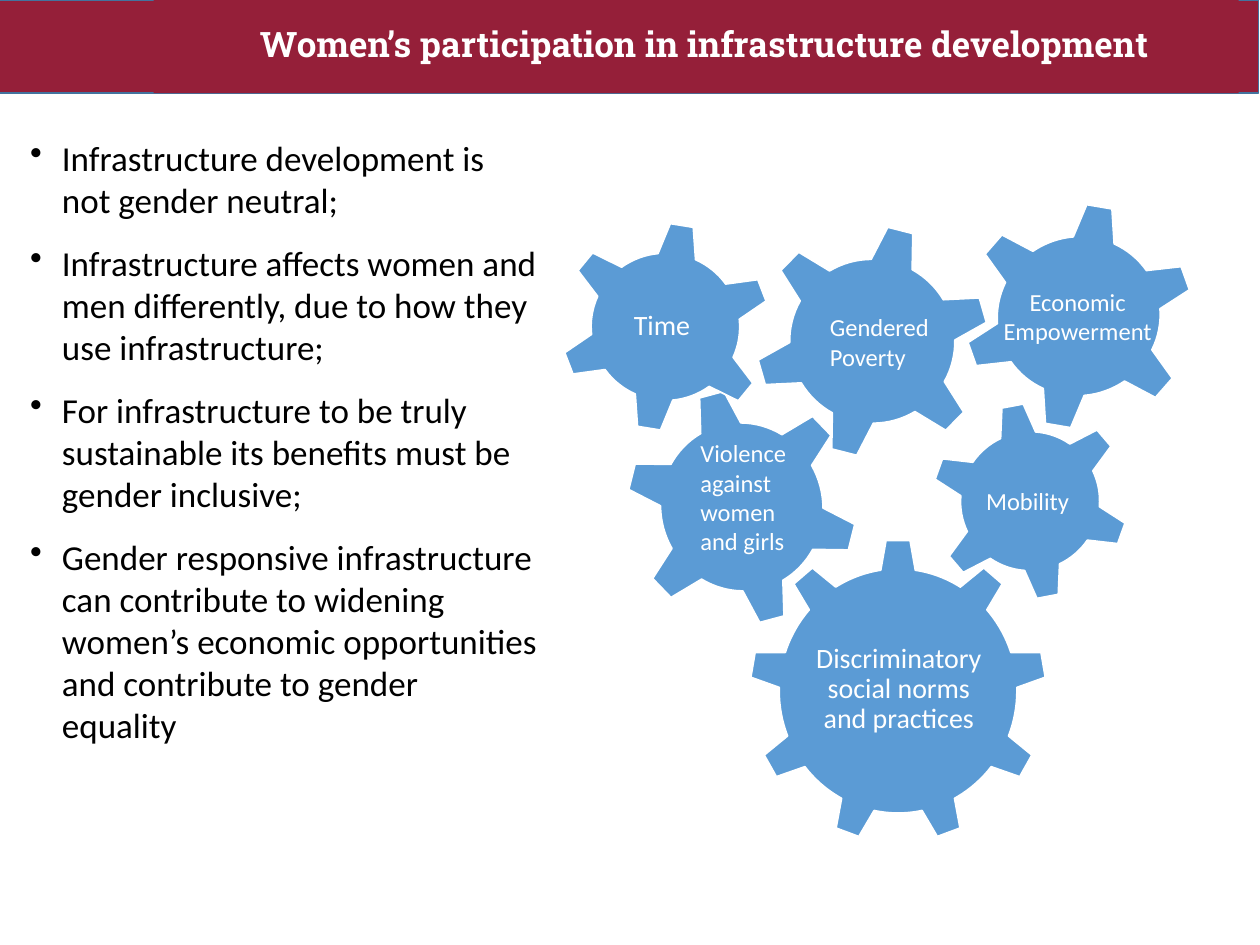
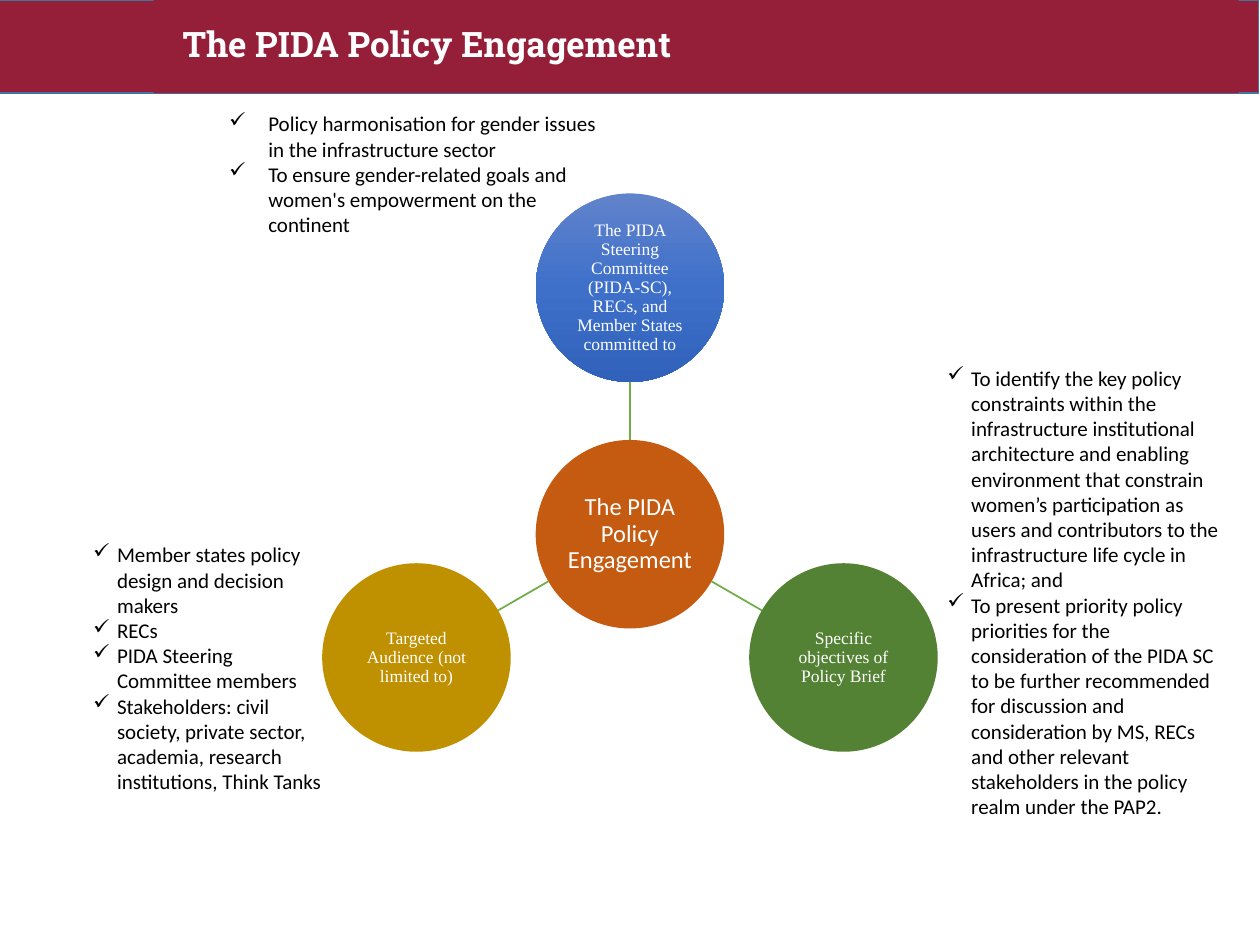
import copy
import dataclasses
import math

import lxml.etree
import pptx
import pptx.dml.color
import pptx.enum.shapes
import pptx.enum.text
import pptx.oxml.ns
import pptx.util

Cm = pptx.util.Cm
qn = pptx.oxml.ns.qn
SHAPES = pptx.enum.shapes.MSO_SHAPE
LEFT = pptx.enum.text.PP_ALIGN.LEFT
CENTER = pptx.enum.text.PP_ALIGN.CENTER
TOP = pptx.enum.text.MSO_ANCHOR.TOP
MIDDLE = pptx.enum.text.MSO_ANCHOR.MIDDLE

# Shared look
BAND_FILL, BAND_LINE = "951F39", "43739E"
WHITE, BLACK = "FFFFFF", "000000"
GEAR_BLUE, LINK_GREEN = "5B9BD5", "70AD47"
BODY_FONT, TITLE_FONT, DISC_FONT = "Calibri", "Roboto Slab", "Times New Roman"
BAND_HEIGHT = 1.88

# Hub diagram, in centimetres
HUB_X, HUB_Y = 12.7, 10.77
DISC_RADIUS, ORBIT = 1.9, 4.97


@dataclasses.dataclass(frozen=True)
class Box:
    left: float
    top: float
    width: float
    height: float

    def lengths(self) -> list:
        return [Cm(v) for v in dataclasses.astuple(self)]


@dataclasses.dataclass(frozen=True)
class Gear:
    label: str
    box: Box
    label_box: Box
    rotation: float = 0
    kind: int = SHAPES.GEAR_6
    size: int = 14
    align: int = LEFT
    anchor: int = TOP
    line_spacing: float = 1.0
    inset: float = None


@dataclasses.dataclass(frozen=True)
class Disc:
    label: str
    angle: float
    fills: tuple


@dataclasses.dataclass(frozen=True)
class Checklist:
    box: Box
    indent: float
    hanging: float
    items: list


GEARS = [
    Gear("Violence against women and girls", Box(12.62, 7.82, 4.67, 4.8),
         Box(13.87, 8.71, 2.46, 2.64), rotation=345),
    Gear("Mobility", Box(18.77, 8.1, 3.99, 4.01),
         Box(19.63, 9.68, 2.21, 0.86), rotation=49.5),
    Gear("Discriminatory social norms and practices", Box(15.11, 10.87, 5.99, 6.12),
         Box(16.28, 12.32, 3.68, 3.15), kind=SHAPES.GEAR_9, size=16,
         align=CENTER, anchor=MIDDLE, line_spacing=0.9, inset=0.05),
    Gear("Economic Empowerment", Box(19.46, 4.04, 4.57, 4.67),
         Box(19.96, 5.66, 3.53, 1.45), rotation=70.4, align=CENTER),
    Gear("Gendered Poverty", Box(15.21, 4.52, 4.75, 4.72),
         Box(16.48, 6.17, 2.74, 1.45), rotation=14.2),
    Gear("Time", Box(11.28, 4.47, 4.27, 4.24),
         Box(12.24, 6.07, 2.21, 0.94), rotation=9.2, size=16, align=CENTER),
]

KEY_POINTS = [
    "Infrastructure development is not gender neutral;",
    "Infrastructure affects women and men differently, due to how they use infrastructure;",
    "For infrastructure to be truly sustainable its benefits must be gender inclusive;",
    "Gender responsive infrastructure can contribute to widening women’s economic "
    "opportunities and contribute to gender equality",
]

SATELLITES = [
    Disc("The PIDA Steering Committee (PIDA-SC), RECs, and Member States committed to",
         -90, ("6183CB", "3E70CA", "3062BB")),
    Disc("Specific objectives of Policy Brief", 30, ("548235",)),
    Disc("Targeted Audience (not limited to)", 150, ("BF9000",)),
]

CHECKLISTS = [
    Checklist(Box(3.1, 2.11, 9.55, 3.58), 2.06, 0.79, [
        "Policy harmonisation for gender issues in the infrastructure sector",
        "To ensure gender-related goals and women's empowerment on the continent",
    ]),
    Checklist(Box(18.21, 7.24, 6.68, 10.26), 1.12, 0.48, [
        "To identify the key policy constraints within the infrastructure institutional "
        "architecture and enabling environment that constrain women’s participation as "
        "users and contributors to the infrastructure life cycle in Africa; and",
        "To present priority policy priorities for the consideration of the PIDA SC to be "
        "further recommended for discussion and consideration by MS, RECs and other "
        "relevant stakeholders in the policy realm under the PAP2.",
    ]),
    Checklist(Box(0.99, 10.8, 5.89, 6.15), 1.12, 0.48, [
        "Member states policy design and decision makers",
        "RECs",
        "PIDA Steering Committee members",
        "Stakeholders: civil society, private sector, academia, research institutions, "
        "Think Tanks",
    ]),
]


def color(hex_value: str):
    return pptx.dml.color.RGBColor.from_string(hex_value)


def write(shape, lines, *, size=12, font=BODY_FONT, ink=BLACK, bold=False, align=LEFT,
          anchor=TOP, line_spacing=1.0, space_after=0, indent=0.0, hanging=0.0,
          bullet="", inset=None) -> None:
    """Fill a shape with one paragraph for each line of text."""
    frame = shape.text_frame
    frame.word_wrap = True
    frame.vertical_anchor = anchor
    if inset is not None:
        frame.margin_left = frame.margin_right = Cm(inset)
        frame.margin_top = frame.margin_bottom = Cm(inset)
    for index, line in enumerate(lines):
        paragraph = frame.add_paragraph() if index else frame.paragraphs[0]
        paragraph.alignment = align
        paragraph.line_spacing = line_spacing
        paragraph.space_after = pptx.util.Pt(space_after)
        properties = paragraph._p.get_or_add_pPr()
        properties.set("marL", str(Cm(indent)))
        properties.set("indent", str(-Cm(hanging)))
        if bullet:
            lxml.etree.SubElement(properties, qn("a:buChar")).set("char", bullet)
        run = paragraph.add_run()
        run.text = line
        run.font.name = font
        run.font.size = pptx.util.Pt(size)
        run.font.bold = bold
        run.font.color.rgb = color(ink)


def add_text(slide, box: Box, lines: list, **text_format) -> None:
    write(slide.shapes.add_textbox(*box.lengths()), lines, **text_format)


def add_figure(slide, kind: int, box: Box, fills: tuple, line: str = ""):
    """Draw a preset shape; several fills make a top-to-bottom gradient."""
    figure = slide.shapes.add_shape(kind, *box.lengths())
    figure.shadow.inherit = False
    if len(fills) == 1:
        figure.fill.solid()
        figure.fill.fore_color.rgb = color(fills[0])
    else:
        figure.fill.gradient()
        figure.fill.gradient_angle = 270
        stop_list = figure._element.spPr.find(".//" + qn("a:gsLst"))
        while len(stop_list) < len(fills):
            stop_list.append(copy.deepcopy(stop_list[0]))
        for index, stop in enumerate(figure.fill.gradient_stops):
            stop.position = index / (len(fills) - 1)
            stop.color.rgb = color(fills[index])
    if line:
        figure.line.color.rgb = color(line)
        figure.line.width = pptx.util.Pt(1)
    else:
        figure.line.fill.background()
    return figure


def add_titled_slide(deck, title: str, align: int):
    slide = deck.slides.add_slide(deck.slide_layouts[6])
    add_figure(slide, SHAPES.RECTANGLE, Box(-0.03, 0, 25.4, BAND_HEIGHT),
               (BAND_FILL,), BAND_LINE)
    heading = add_figure(slide, SHAPES.RECTANGLE, Box(3.1, 0, 21.87, BAND_HEIGHT),
                         (BAND_FILL,))
    write(heading, [title], size=20, font=TITLE_FONT, ink=WHITE, bold=True, align=align,
          anchor=MIDDLE, line_spacing=0.9, indent=0.33)
    return slide


def add_gear(slide, gear: Gear) -> None:
    wheel = add_figure(slide, gear.kind, gear.box, (GEAR_BLUE,), WHITE)
    wheel.rotation = gear.rotation
    add_text(slide, gear.label_box, [gear.label], size=gear.size, ink=WHITE,
             align=gear.align, anchor=gear.anchor, line_spacing=gear.line_spacing,
             inset=gear.inset)


def orbit_point(angle: float, distance: float) -> tuple[float, float]:
    turn = math.radians(angle)
    return HUB_X + distance * math.cos(turn), HUB_Y + distance * math.sin(turn)


def add_disc(slide, disc: Disc, distance: float, size: int, font: str) -> None:
    x, y = orbit_point(disc.angle, distance)
    box = Box(x - DISC_RADIUS, y - DISC_RADIUS, 2 * DISC_RADIUS, 2 * DISC_RADIUS)
    circle = add_figure(slide, SHAPES.OVAL, box, disc.fills)
    write(circle, [disc.label], size=size, font=font, ink=WHITE, align=CENTER,
          anchor=MIDDLE, line_spacing=0.9, inset=0.03)


def add_link(slide, angle: float) -> None:
    """Join the rims of the hub and of the satellite at this angle."""
    ends = orbit_point(angle, DISC_RADIUS) + orbit_point(angle, ORBIT - DISC_RADIUS)
    link = slide.shapes.add_connector(pptx.enum.shapes.MSO_CONNECTOR.STRAIGHT,
                                      *[Cm(v) for v in ends])
    link.line.color.rgb = color(LINK_GREEN)
    link.line.width = pptx.util.Pt(1)
    lxml.etree.SubElement(link._element.spPr, qn("a:effectLst"))


def build_participation(deck) -> None:
    slide = add_titled_slide(
        deck, "Women’s participation in infrastructure development", CENTER)
    add_text(slide, Box(0.36, 2.62, 10.72, 15.04), KEY_POINTS, size=20, space_after=12,
             indent=0.64, hanging=0.64, bullet="•")
    for gear in GEARS:
        add_gear(slide, gear)


def build_engagement(deck) -> None:
    slide = add_titled_slide(deck, "The PIDA Policy Engagement", LEFT)
    hub = Disc("The PIDA Policy Engagement", 0, ("C55A11",))
    add_disc(slide, hub, 0, 14, BODY_FONT)
    for satellite in SATELLITES:
        add_link(slide, satellite.angle)
        add_disc(slide, satellite, ORBIT, 10, DISC_FONT)
    for checklist in CHECKLISTS:
        add_text(slide, checklist.box, checklist.items, indent=checklist.indent,
                 hanging=checklist.hanging, bullet="✓")


def main() -> None:
    deck = pptx.Presentation()
    deck.slide_width, deck.slide_height = Cm(25.4), Cm(19.05)
    build_participation(deck)
    build_engagement(deck)
    deck.save("out.pptx")


if __name__ == "__main__":
    main()
